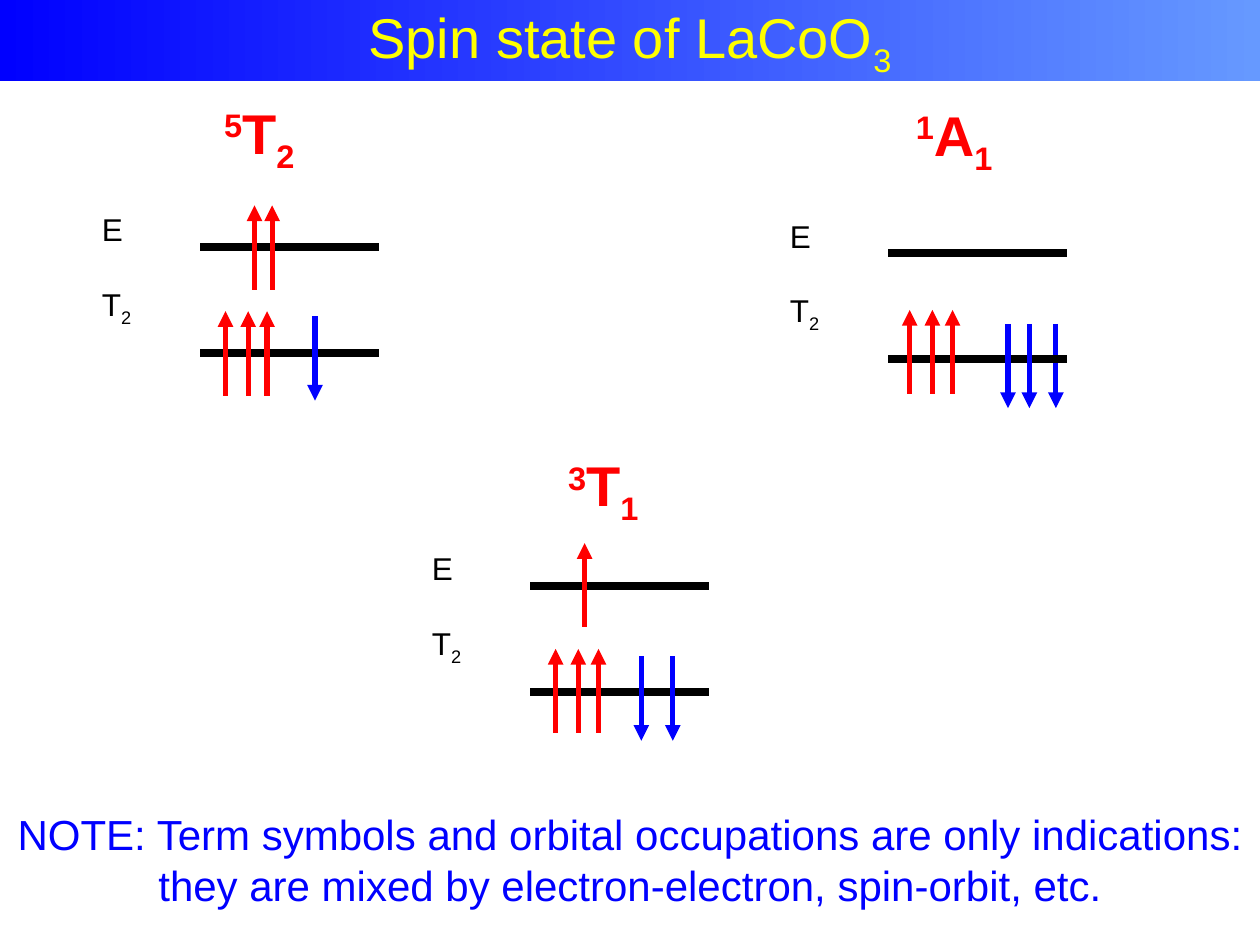
from collections import namedtuple
from dataclasses import dataclass

from lxml.etree import SubElement
from pptx import Presentation
from pptx.dml.color import RGBColor as RGB
from pptx.enum.shapes import MSO_CONNECTOR as Connector
from pptx.enum.text import MSO_ANCHOR as Anchor, MSO_AUTO_SIZE as AutoSize, PP_ALIGN as Align
from pptx.oxml.ns import qn
from pptx.util import Inches, Pt


@dataclass(frozen=True)
class Theme:
    font: str = "Arial"
    black: RGB = RGB(0, 0, 0)
    red: RGB = RGB(0xFF, 0, 0)
    blue: RGB = RGB(0, 0, 0xFF)
    light_blue: RGB = RGB(0x66, 0x99, 0xFF)
    yellow: RGB = RGB(0xFF, 0xFF, 0)
    heading: int = 32
    note: int = 24
    label: int = 18
    level_width: float = 4.5
    spin_width: float = 3


SUPER, SUB = 30, -25
LEVEL_LENGTH = 1.42
SPIN_LENGTH = 0.67

# left and top place the level labels; each spin is (x, top of arrow)
Diagram = namedtuple("Diagram", "left top term term_at spins_up spins_down")

DIAGRAMS = [
    Diagram(0.71, 1.62, "5T2", (1.68, 0.73, 0.81),
            [(1.79, 2.47), (1.97, 2.47), (2.12, 2.47), (2.02, 1.63), (2.16, 1.63)],
            [(2.5, 2.51)]),
    Diagram(6.17, 1.67, "1A1", (7.17, 0.75, 0.86),
            [(7.22, 2.46), (7.4, 2.46), (7.56, 2.46)],
            [(8.0, 2.57), (8.17, 2.57)]),
    Diagram(3.33, 4.31, "3T1", (4.41, 3.53, 0.81),
            [(4.41, 5.15), (4.59, 5.15), (4.75, 5.15), (4.64, 4.31)],
            [(5.09, 5.21), (5.34, 5.21)]),
]


class SlideBuilder:
    def __init__(self, slide, theme):
        self.slide = slide
        self.theme = theme

    def fill_paragraph(self, paragraph, runs, size, color, bold=False, align=Align.LEFT):
        """Fill a paragraph with (text, baseline percent) runs."""
        paragraph.alignment = align
        font = paragraph.font
        font.name, font.size, font.bold = self.theme.font, Pt(size), bold
        font.color.rgb = color
        for text, baseline in runs:
            run = paragraph.add_run()
            run.text = text
            if baseline:
                run._r.get_or_add_rPr().set("baseline", str(baseline * 1000))

    def title(self, runs):
        shape = self.slide.shapes.title
        shape.left, shape.top = Inches(0), Inches(0)
        shape.width, shape.height = Inches(10), Inches(0.64)
        shape.fill.gradient()
        shape.fill.gradient_angle = 0
        colors = (self.theme.blue, self.theme.light_blue)
        for position, (stop, color) in enumerate(zip(shape.fill.gradient_stops, colors)):
            stop.position = position
            stop.color.rgb = color
        frame = shape.text_frame
        frame.auto_size = AutoSize.NONE
        frame.vertical_anchor = Anchor.MIDDLE
        self.fill_paragraph(frame.paragraphs[0], runs, self.theme.heading,
                            self.theme.yellow, align=Align.CENTER)

    def text_box(self, left, top, width, height, wrap=False):
        box = self.slide.shapes.add_textbox(
            Inches(left), Inches(top), Inches(width), Inches(height))
        frame = box.text_frame
        frame.word_wrap = wrap
        frame.auto_size = AutoSize.SHAPE_TO_FIT_TEXT
        return frame

    def line(self, start, end, color, width, arrow=None):
        """Draw a line; arrow is "headEnd" (at start) or "tailEnd" (at end)."""
        connector = self.slide.shapes.add_connector(
            Connector.STRAIGHT, *map(Inches, start + end))
        connector.line.color.rgb = color
        connector.line.width = Pt(width)
        properties = connector._element.spPr
        if arrow:
            SubElement(properties.find(qn("a:ln")), qn("a:" + arrow), type="triangle")
        SubElement(properties, qn("a:effectLst"))

    def spin(self, x, top, up):
        color, arrow = (self.theme.red, "headEnd") if up else (self.theme.blue, "tailEnd")
        self.line((x, top), (x, top + SPIN_LENGTH), color, self.theme.spin_width, arrow)

    def level_labels(self, left, top):
        frame = self.text_box(left, top, 0.59, 1.51)
        style = (self.theme.label, self.theme.black)
        self.fill_paragraph(frame.paragraphs[0], [("E", 0)], *style)
        lower = frame.add_paragraph()
        lower.space_before = Pt(21)
        self.fill_paragraph(lower, [("T", 0), ("2", SUB)], *style)

    def diagram(self, diagram):
        # Energy levels
        start = diagram.left + 0.88
        for offset in (0.34, 1.18):
            y = diagram.top + offset
            self.line((start, y), (start + LEVEL_LENGTH, y),
                      self.theme.black, self.theme.level_width)
        self.level_labels(diagram.left, diagram.top)

        # Electrons
        for x, top in diagram.spins_up:
            self.spin(x, top, up=True)
        for x, top in diagram.spins_down:
            self.spin(x, top, up=False)

        # Term symbol
        frame = self.text_box(*diagram.term_at, 0.64)
        self.fill_paragraph(frame.paragraphs[0], zip(diagram.term, (SUPER, 0, SUB)),
                            self.theme.heading, self.theme.red, bold=True)

    def note(self, text):
        frame = self.text_box(0, 6.37, 10, 0.91, wrap=True)
        self.fill_paragraph(frame.paragraphs[0], [(text, 0)], self.theme.note,
                            self.theme.blue, align=Align.CENTER)


def main():
    presentation = Presentation()
    presentation.slide_width, presentation.slide_height = Inches(10), Inches(7.5)
    slide = presentation.slides.add_slide(presentation.slide_layouts[5])
    builder = SlideBuilder(slide, Theme())

    builder.title([("Spin state of LaCoO", 0), ("3", SUB)])
    # The outermost spin of 1A1 lies behind its level
    builder.spin(8.38, 2.57, up=False)
    for diagram in DIAGRAMS:
        builder.diagram(diagram)
    builder.note("NOTE: Term symbols and orbital occupations are only indications: "
                 "they are mixed by electron-electron, spin-orbit, etc.")

    presentation.save("out.pptx")


if __name__ == "__main__":
    main()
